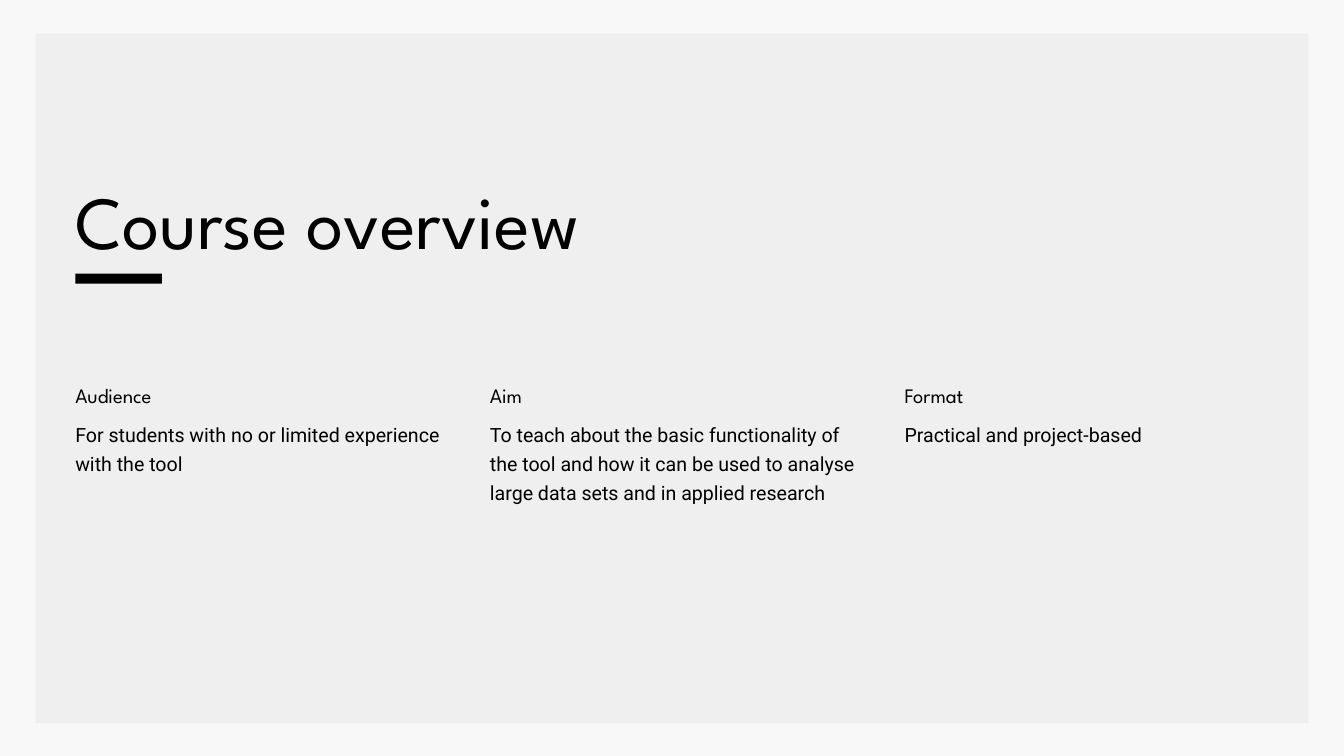
from pptx import Presentation
from pptx.dml.color import RGBColor
from pptx.enum import shapes, text
from pptx.util import Inches, Pt

HUES = {"page": "F8F8F8", "panel": "EFEFEF", "ink": "000000"}
HEAD, BODY = "League Spartan", "Roboto"
TOPICS = [
    ("Audience", "For students with no or limited experience with the tool", 0.84),
    ("Aim", "To teach about the basic functionality of the tool and how it can be "
            "used to analyse large data sets and in applied research", 1.72),
    ("Format", "Practical and project-based", 0.4),
]


def hue(name):
    return RGBColor.from_string(HUES[name])


def add_block(slide, box, name):
    block = slide.shapes.add_shape(
        shapes.MSO_SHAPE.RECTANGLE, *map(Inches, box))
    block.shadow.inherit = False
    block.fill.solid()
    block.fill.fore_color.rgb = hue(name)
    block.line.fill.background()


def add_text(slide, box, words, face, size, pitch):
    frame = slide.shapes.add_textbox(*map(Inches, box)).text_frame
    frame.margin_left = frame.margin_right = 0
    frame.margin_top = frame.margin_bottom = 0
    frame.word_wrap = True
    frame.auto_size = text.MSO_AUTO_SIZE.SHAPE_TO_FIT_TEXT
    para = frame.paragraphs[0]
    para.text = words
    para.line_spacing = Pt(pitch)
    para.font.name = face
    para.font.size = Pt(size)
    para.font.color.rgb = hue("ink")


def add_title(slide, left, top, width):
    add_text(slide, (left, top, width, 1.26), "Course overview", HEAD, 80, 88)
    add_block(slide, (left, top + 1.35, 1.29, 0.15), "ink")


def add_topic(slide, left, top, width, label, words, tall):
    add_text(slide, (left, top, width, 0.41), label, HEAD, 22, 30.8)
    add_text(slide, (left, top + 0.56, width, tall), words, BODY, 21, 31.5)


def add_topics(slide, left, top, width, gap):
    for i, topic in enumerate(TOPICS):
        add_topic(slide, left + i * (width + gap), top, width, *topic)


def main():
    deck = Presentation()
    deck.slide_width, deck.slide_height = Inches(20), Inches(11.25)
    slide = deck.slides.add_slide(deck.slide_layouts[6])
    slide.background.fill.solid()
    slide.background.fill.fore_color.rgb = hue("page")
    add_block(slide, (0.53, 0.5, 18.94, 10.26), "panel")
    add_title(slide, 1.12, 2.72, 16.11)
    add_topics(slide, 1.12, 5.64, 5.45, 0.72)
    deck.save("out.pptx")


if __name__ == "__main__":
    main()
